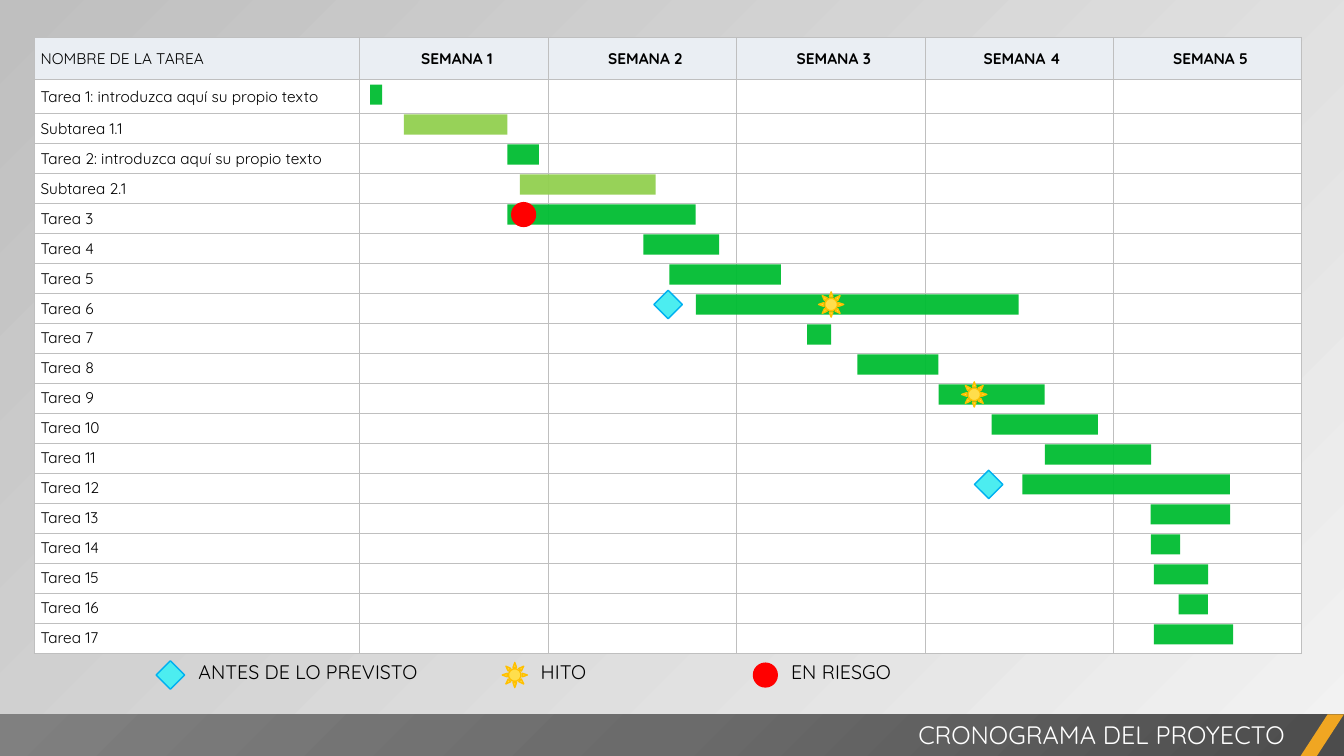
from lxml import etree
from pptx import Presentation
from pptx.dml.color import RGBColor
from pptx.enum import shapes, text
from pptx.oxml import ns, parse_xml
from pptx.util import Pt

FONT = "Quicksand"
COLORS = {
    "black": "000000", "white": "FFFFFF", "header": "EAEEF3", "grid": "BFBFBF",
    "task": "00BD32", "subtask": "92D050",
    "early": "4CEDF0", "early_line": "00B0F0",
    "milestone": "FFDE4C", "milestone_line": "FFC000",
    "risk": "FF0000", "accent": "F0A622",
    "light": "F2F2F2", "dark": "4C4C4C", "medium": "6B6B6B", "gray": "808080",
}
WEEKS = 5
TABLE_LEFT, TABLE_TOP = 24.5, 26.8
NAME_WIDTH, WEEK_WIDTH = 232.4, 134.6
HEADER_HEIGHT, FIRST_HEIGHT, ROW_HEIGHT = 30, 24.3, 21.42
BAR_TOP, BAR_HEIGHT = 60.4, 14.4
FOOTER_TOP, FOOTER_HEIGHT = 510.2, 29.8
LEGEND_Y = 482.2

TASKS = [
    ("Tarea 1: introduzca aquí su propio texto", 264.3, 8.6),
    ("Subtarea 1.1", 288.5, 74),
    ("Tarea 2: introduzca aquí su propio texto", 362.4, 22.5),
    ("Subtarea 2.1", 371.3, 97),
    ("Tarea 3", 362.4, 134.6),
    ("Tarea 4", 459.6, 54.2),
    ("Tarea 5", 478.1, 79.8),
    ("Tarea 6", 497, 230.6),
    ("Tarea 7", 576.5, 17.2),
    ("Tarea 8", 612.4, 58),
    ("Tarea 9", 670.4, 75.9),
    ("Tarea 10", 708.4, 75.9),
    ("Tarea 11", 746.4, 75.9),
    ("Tarea 12", 730.2, 148.4),
    ("Tarea 13", 822, 56.7),
    ("Tarea 14", 822, 21),
    ("Tarea 15", 824.2, 38.7),
    ("Tarea 16", 841.8, 21),
    ("Tarea 17", 824.2, 56.7),
]
MARKERS = {
    "early": (shapes.MSO_SHAPE.RECTANGLE, 14.4, "early_line"),
    "milestone": (shapes.MSO_SHAPE.SUN, 18, "milestone_line"),
    "risk": (shapes.MSO_SHAPE.OVAL, 18, None),
}
TASK_MARKERS = [
    ("risk", 374, "Tarea 3"),
    ("milestone", 593.7, "Tarea 6"),
    ("milestone", 695.9, "Tarea 9"),
    ("early", 477.2, "Tarea 6"),
    ("early", 706.2, "Tarea 12"),
]
LEGEND = [
    ("early", 121.7, "ANTES DE LO PREVISTO", 134.6, 183.6),
    ("milestone", 367.7, "HITO", 379.2, 88.6),
    ("risk", 546.7, "EN RIESGO", 558, 118.8),
]


def rgb(name):
    return RGBColor.from_string(COLORS[name])


def bar_top(row):
    return BAR_TOP + row * ROW_HEIGHT


def style_paragraph(paragraph, size, color="black", bold=False, align=text.PP_ALIGN.LEFT):
    paragraph.alignment = align
    paragraph.font.name = FONT
    paragraph.font.size = Pt(size)
    paragraph.font.bold = bold
    paragraph.font.color.rgb = rgb(color)


def add_shape(slide, kind, left, top, width, height, color=None, line=None):
    shape = slide.shapes.add_shape(kind, Pt(left), Pt(top), Pt(width), Pt(height))
    shape.shadow.inherit = False
    if color:
        shape.fill.solid()
        shape.fill.fore_color.rgb = rgb(color)
    if line:
        shape.line.color.rgb = rgb(line)
        shape.line.width = Pt(1)
    else:
        shape.line.fill.background()
    return shape


def set_background(slide):
    fill = slide.background.fill
    fill.gradient()
    fill.gradient_angle = 135
    for stop, color in zip(fill.gradient_stops, ("light", "grid")):
        stop.color.rgb = rgb(color)


def format_cell(cell, fill, words="", bold=False, align=text.PP_ALIGN.LEFT):
    cell.margin_left = Pt(4.5)
    cell.margin_right = cell.margin_top = cell.margin_bottom = 0
    cell.vertical_anchor = text.MSO_ANCHOR.MIDDLE
    cell.text = words
    paragraph = cell.text_frame.paragraphs[0]
    style_paragraph(paragraph, 11, bold=bold, align=align)
    if not words:
        etree.SubElement(paragraph._p, ns.qn("a:endParaRPr"), sz="1100")
    properties = cell._tc.get_or_add_tcPr()
    for side in ("lnL", "lnR", "lnT", "lnB"):
        border = etree.SubElement(properties, ns.qn(f"a:{side}"), w=str(Pt(0.5)))
        solid = etree.SubElement(border, ns.qn("a:solidFill"))
        etree.SubElement(solid, ns.qn("a:srgbClr"), val=COLORS["grid"])
    cell.fill.solid()
    cell.fill.fore_color.rgb = rgb(fill)


def add_schedule_table(slide):
    heights = [HEADER_HEIGHT, FIRST_HEIGHT] + [ROW_HEIGHT] * (len(TASKS) - 1)
    widths = [NAME_WIDTH] + [WEEK_WIDTH] * WEEKS
    table = slide.shapes.add_table(
        len(heights), len(widths), Pt(TABLE_LEFT), Pt(TABLE_TOP),
        Pt(sum(widths)), Pt(sum(heights))).table
    table.first_row = table.horz_banding = False
    for column, width in zip(table.columns, widths):
        column.width = Pt(width)
    for row, height in zip(table.rows, heights):
        row.height = Pt(height)
    format_cell(table.cell(0, 0), "header", "NOMBRE DE LA TAREA")
    for week in range(1, WEEKS + 1):
        format_cell(table.cell(0, week), "header", f"SEMANA {week}", True, text.PP_ALIGN.CENTER)
    for row, (name, _, _) in enumerate(TASKS, 1):
        format_cell(table.cell(row, 0), "white", name)
        for week in range(1, WEEKS + 1):
            format_cell(table.cell(row, week), "white")


def add_task_bar(slide, row, name, start, length):
    color = "subtask" if name.startswith("Subtarea") else "task"
    bar = add_shape(slide, shapes.MSO_SHAPE.RECTANGLE, start, bar_top(row),
                    length, BAR_HEIGHT, color)
    fill_color = bar._element.spPr.find(ns.qn("a:solidFill"))[0]
    etree.SubElement(fill_color, ns.qn("a:alpha"), val="95000")


def add_marker(slide, status, center_x, center_y):
    kind, size, line = MARKERS[status]
    marker = add_shape(slide, kind, center_x - size / 2, center_y - size / 2,
                       size, size, status, line)
    marker.rotation = 45


def add_label(slide, words, left, width):
    frame = slide.shapes.add_textbox(Pt(left), Pt(468), Pt(width), Pt(24.5)).text_frame
    frame.word_wrap = True
    frame.text = words
    style_paragraph(frame.paragraphs[0], 14)


def add_footer(slide):
    band = add_shape(slide, shapes.MSO_SHAPE.RECTANGLE, 0, FOOTER_TOP, 960, FOOTER_HEIGHT)
    stops = "".join(f'<a:gs pos="{position}"><a:srgbClr val="{COLORS[color]}"/></a:gs>'
                    for position, color in ((0, "dark"), (50000, "medium"), (100000, "gray")))
    gradient = parse_xml(
        f'<a:gradFill {ns.nsdecls("a")}><a:gsLst>{stops}</a:gsLst>'
        '<a:path path="circle"><a:fillToRect l="100000" t="100000"/></a:path></a:gradFill>')
    band._element.spPr.find(ns.qn("a:prstGeom")).addnext(gradient)
    stripe = add_shape(slide, shapes.MSO_SHAPE.PARALLELOGRAM, 929, FOOTER_TOP, 31,
                       FOOTER_HEIGHT, "accent")
    stripe.adjustments[0] = 0.65


def place_title(slide, words):
    title = slide.shapes.title
    title.left, title.top, title.width, title.height = Pt(378), Pt(510), Pt(547), Pt(29)
    frame = title.text_frame
    frame.text = words
    frame.word_wrap = True
    frame.auto_size = text.MSO_AUTO_SIZE.NONE
    frame.vertical_anchor = text.MSO_ANCHOR.MIDDLE
    style_paragraph(frame.paragraphs[0], 18, "white", align=text.PP_ALIGN.RIGHT)
    slide.shapes._spTree.append(title._element)


def main():
    presentation = Presentation()
    presentation.slide_width, presentation.slide_height = Pt(960), Pt(540)
    slide = presentation.slides.add_slide(presentation.slide_layouts[5])
    set_background(slide)
    add_schedule_table(slide)
    for row, task in enumerate(TASKS):
        add_task_bar(slide, row, *task)
    for status, center_x, words, left, width in LEGEND:
        add_marker(slide, status, center_x, LEGEND_Y)
        add_label(slide, words, left, width)
    names = [name for name, _, _ in TASKS]
    for status, center_x, name in TASK_MARKERS:
        add_marker(slide, status, center_x, bar_top(names.index(name)) + BAR_HEIGHT / 2)
    add_footer(slide)
    place_title(slide, "CRONOGRAMA DEL PROYECTO")
    presentation.save("out.pptx")


if __name__ == "__main__":
    main()
